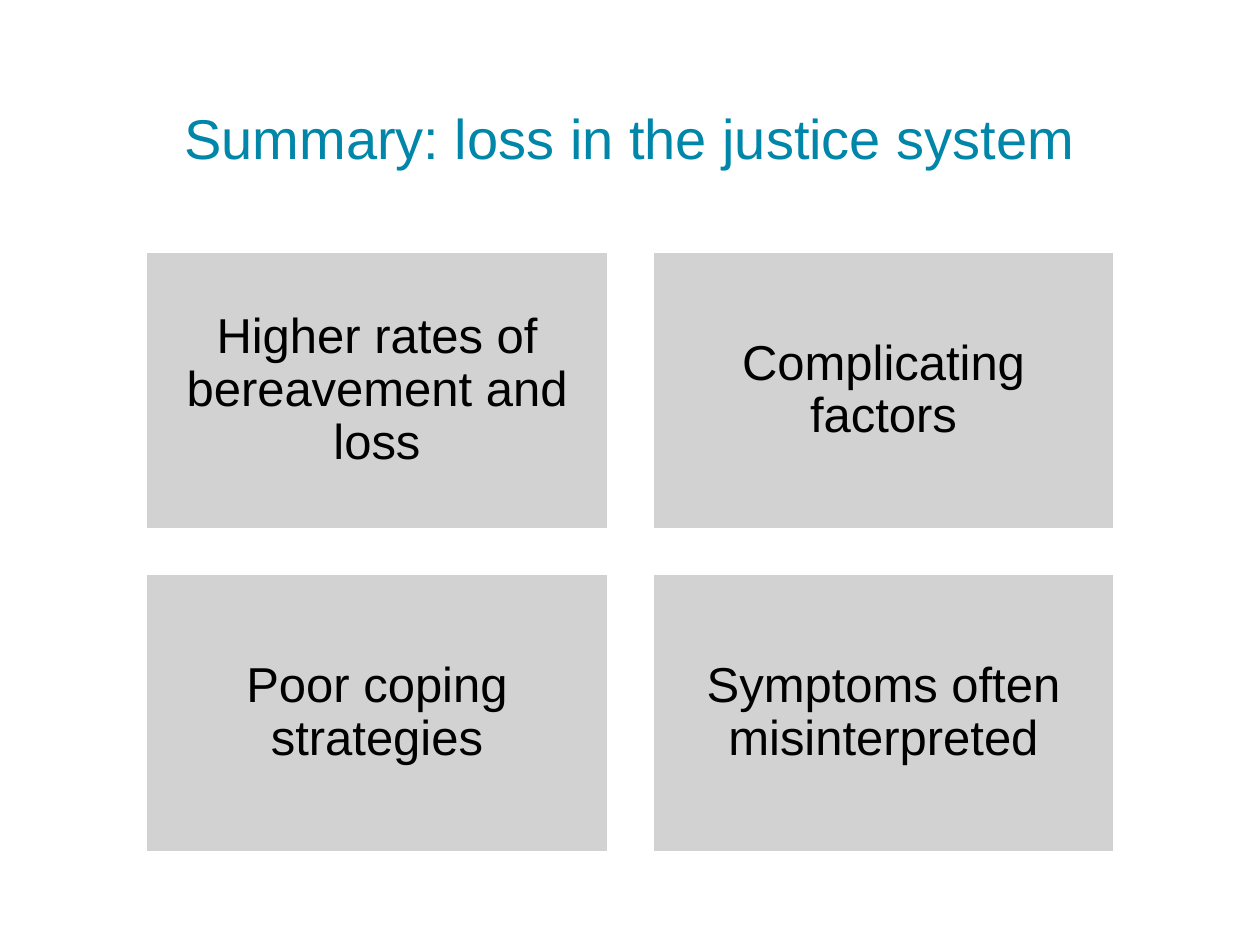
"""Build the summary slide: a title above a two-by-two grid of loss themes."""

from dataclasses import dataclass

import lxml.etree
import pptx
import pptx.dml.color
import pptx.enum.shapes
import pptx.enum.text
import pptx.oxml.ns
import pptx.shapes.autoshape
import pptx.slide
import pptx.util

Cm = pptx.util.Cm
Pt = pptx.util.Pt
RGBColor = pptx.dml.color.RGBColor


@dataclass(frozen=True)
class Theme:
    font: str = "Arial"
    title_size: int = 32
    card_size: int = 28
    title_color: str = "0086A8"
    card_text: str = "000000"
    card_fill: str = "A6A6A6"
    card_opacity: int = 50
    card_border: str = "FFFFFF"
    line_spacing: float = 0.9


@dataclass(frozen=True)
class Grid:
    left: float = 2.95
    top: float = 5.08
    width: float = 9.3
    height: float = 5.59
    gap: float = 0.91
    columns: int = 2


@dataclass(frozen=True)
class Card:
    text: str
    row: int
    column: int


THEME = Theme()
GRID = Grid()
TITLE = "Summary: loss in the justice system"
THEMES = (
    "Higher rates of bereavement and loss",
    "Complicating factors",
    "Poor coping strategies",
    "Symptoms often misinterpreted",
)


def write_text(
    holder: pptx.shapes.autoshape.Shape, text: str, size: int, color: str
) -> None:
    frame = holder.text_frame
    frame.word_wrap = True
    frame.vertical_anchor = pptx.enum.text.MSO_ANCHOR.MIDDLE
    paragraph = frame.paragraphs[0]
    paragraph.text = text
    paragraph.alignment = pptx.enum.text.PP_ALIGN.CENTER
    paragraph.line_spacing = THEME.line_spacing
    paragraph.font.name = THEME.font
    paragraph.font.size = Pt(size)
    paragraph.font.color.rgb = RGBColor.from_string(color)


def set_fill_opacity(shape: pptx.shapes.autoshape.Shape, percent: int) -> None:
    qn = pptx.oxml.ns.qn
    fill = shape.element.spPr.find(qn("a:solidFill"))
    alpha = lxml.etree.SubElement(fill.find(qn("a:srgbClr")), qn("a:alpha"))
    alpha.set("val", str(percent * 1000))


def draw_title(slide: pptx.slide.Slide, text: str) -> None:
    title = slide.shapes.add_textbox(Cm(1.75), Cm(1.02), Cm(21.9), Cm(3.68))
    write_text(title, text, THEME.title_size, THEME.title_color)


def draw_card(slide: pptx.slide.Slide, card: Card) -> None:
    box = slide.shapes.add_shape(
        pptx.enum.shapes.MSO_SHAPE.RECTANGLE,
        Cm(GRID.left + card.column * (GRID.width + GRID.gap)),
        Cm(GRID.top + card.row * (GRID.height + GRID.gap)),
        Cm(GRID.width),
        Cm(GRID.height),
    )
    box.shadow.inherit = False
    box.fill.solid()
    box.fill.fore_color.rgb = RGBColor.from_string(THEME.card_fill)
    set_fill_opacity(box, THEME.card_opacity)
    box.line.color.rgb = RGBColor.from_string(THEME.card_border)
    box.line.width = Pt(1)
    frame = box.text_frame
    frame.margin_left = frame.margin_right = Cm(0.3)
    frame.margin_top = frame.margin_bottom = Cm(0.3)
    write_text(box, card.text, THEME.card_size, THEME.card_text)


def main() -> None:
    presentation = pptx.Presentation()
    presentation.slide_width = Cm(25.4)
    presentation.slide_height = Cm(19.05)
    slide = presentation.slides.add_slide(presentation.slide_layouts[6])
    draw_title(slide, TITLE)
    for index, text in enumerate(THEMES):
        draw_card(slide, Card(text, *divmod(index, GRID.columns)))
    presentation.save("out.pptx")


if __name__ == "__main__":
    main()
